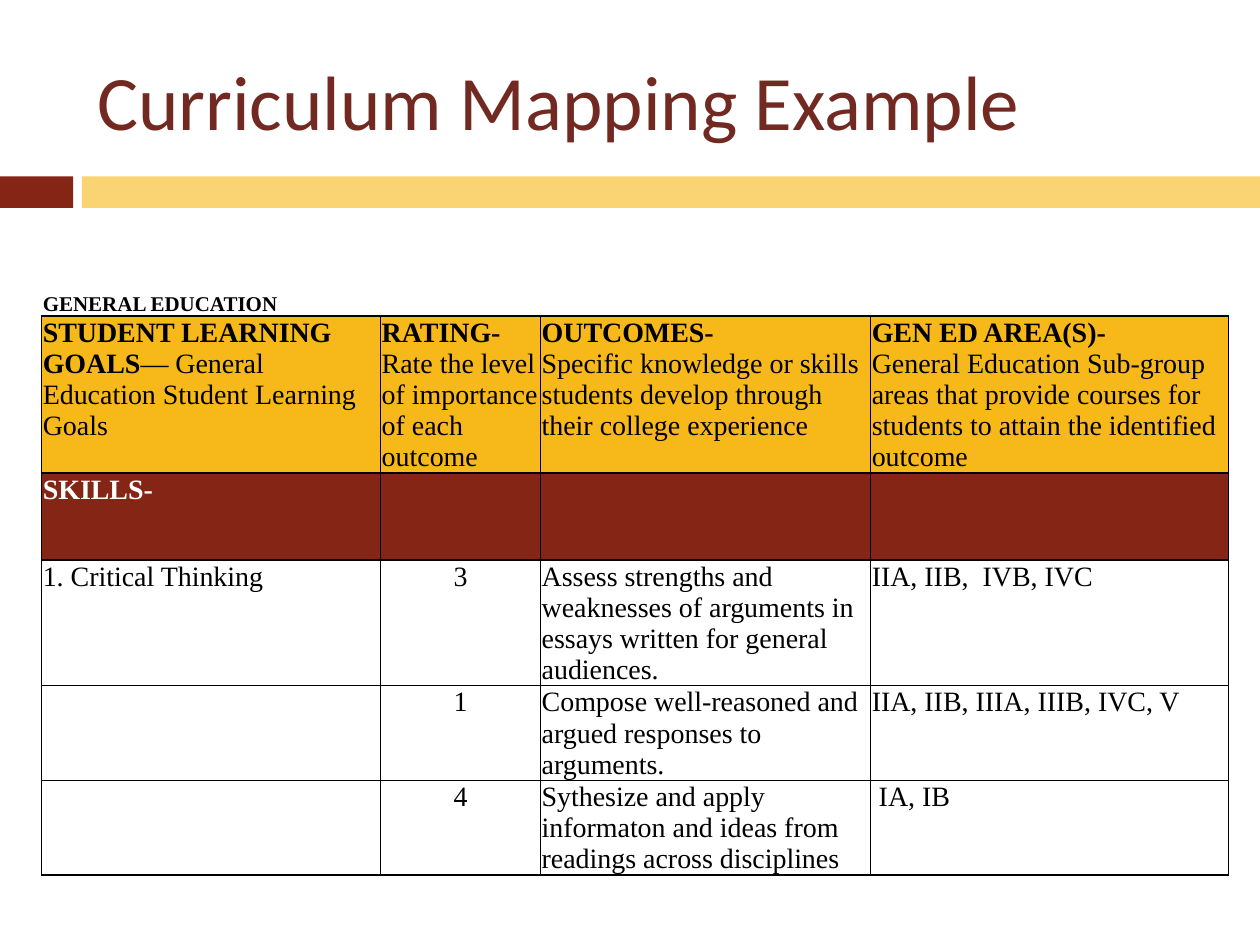
from lxml import etree
from pptx import Presentation
from pptx.dml.color import RGBColor
from pptx.enum.shapes import MSO_SHAPE
from pptx.enum.text import MSO_ANCHOR, PP_ALIGN
from pptx.oxml.ns import qn
from pptx.util import Inches, Pt

RECT = MSO_SHAPE.RECTANGLE
TOP, MIDDLE, BOTTOM = MSO_ANCHOR.TOP, MSO_ANCHOR.MIDDLE, MSO_ANCHOR.BOTTOM
LEFT, CENTER = PP_ALIGN.LEFT, PP_ALIGN.CENTER

MAROON, GOLD, PALE_GOLD = "852515", "F7B81A", "FAD372"
BLACK, WHITE, TITLE_RED = "000000", "FFFFFF", "712921"
COL_WIDTHS = [2.69, 1.27, 2.62, 2.84]
ROW_HEIGHTS = [0.76, 1.24, 0.69, 0.85, 0.69, 0.69]

# Each header cell: bold lead, separator, plain explanation
HEADERS = [
    ("STUDENT LEARNING GOALS", "", "— General Education Student Learning Goals"),
    ("RATING-", "\n", "Rate the level of importance of each outcome"),
    ("OUTCOMES-", "\n", "Specific knowledge or skills students develop "
     "through their college experience"),
    ("GEN ED AREA(S)-", "\n", "General Education Sub-group areas that provide "
     "courses for students to attain the identified outcome"),
]
OUTCOMES = [
    ("1. Critical Thinking", "3", "Assess strengths and weaknesses of arguments "
     "in essays written for general audiences.", "IIA, IIB,  IVB, IVC"),
    ("", "1", "Compose well-reasoned and argued responses to arguments.",
     "IIA, IIB, IIIA, IIIB, IVC, V"),
    ("", "4", "Sythesize and apply informaton and ideas from readings across "
     "disciplines", " IA, IB"),
]


def rgb(value):
    return RGBColor.from_string(value)


def add_text(p, text, size=16, color=BLACK, bold=False, font="Times New Roman"):
    r = p.add_run()
    r.text = text
    r.font.size, r.font.bold, r.font.name = Pt(size), bold, font
    r.font.color.rgb = rgb(color)


def add_bar(s, left, width, color):
    sp = s.shapes.add_shape(RECT, Inches(left), Inches(1.4), Inches(width), Inches(0.25))
    sp.shadow.inherit = False
    sp.fill.solid()
    sp.fill.fore_color.rgb = rgb(color)
    sp.line.fill.background()


def set_borders(cell, visible):
    tcPr = cell._tc.get_or_add_tcPr()
    for side in "LRTB":
        ln = etree.SubElement(tcPr, qn(f"a:ln{side}"), w=str(Pt(1)))
        if side in visible:
            fill = etree.SubElement(ln, qn("a:solidFill"))
            etree.SubElement(fill, qn("a:srgbClr"), val=BLACK)
        else:
            etree.SubElement(ln, qn("a:noFill"))


def format_cell(cell, fill=None, borders="LRTB", anchor=TOP, align=LEFT):
    """Set up a cell and return its paragraph."""
    cell.margin_left = cell.margin_right = cell.margin_top = Inches(0.01)
    cell.margin_bottom = 0
    cell.vertical_anchor = anchor
    set_borders(cell, borders)
    if fill:
        cell.fill.solid()
        cell.fill.fore_color.rgb = rgb(fill)
    else:
        cell.fill.background()
    p = cell.text_frame.paragraphs[0]
    p.alignment = align
    p.font.size = Pt(16)
    return p


def add_title(s):
    sp = s.shapes.title
    sp.left, sp.top, sp.width, sp.height = map(Inches, (0.67, 0.25, 8.92, 1.08))
    tf = sp.text_frame
    tf.word_wrap, tf.vertical_anchor = True, MIDDLE
    p = tf.paragraphs[0]
    p.alignment = LEFT
    add_text(p, "Curriculum Mapping Example", size=44, color=TITLE_RED, font="Calibri")


def add_curriculum_table(s):
    table = s.shapes.add_table(
        len(ROW_HEIGHTS), len(COL_WIDTHS), Inches(0.33), Inches(1.75),
        Inches(sum(COL_WIDTHS)), Inches(sum(ROW_HEIGHTS))).table
    table.first_row = table.horz_banding = False
    for col, width in zip(table.columns, COL_WIDTHS):
        col.width = Inches(width)
    for row, height in zip(table.rows, ROW_HEIGHTS):
        row.height = Inches(height)

    for c, (lead, separator, detail) in enumerate(HEADERS):
        # Caption row, open above and at the sides
        p = format_cell(table.cell(0, c), borders="B", anchor=BOTTOM)
        if c == 0:
            add_text(p, "GENERAL EDUCATION", size=12, bold=True)
        # Column headings
        p = format_cell(table.cell(1, c), fill=GOLD)
        add_text(p, lead, bold=True)
        if separator:
            p.add_line_break()
        add_text(p, detail)
        # Section band
        p = format_cell(table.cell(2, c), fill=MAROON)
        if c == 0:
            add_text(p, "SKILLS-", color=WHITE, bold=True)

    # Goals with their ratings, outcomes and areas
    for r, texts in enumerate(OUTCOMES, start=3):
        for c, text in enumerate(texts):
            p = format_cell(table.cell(r, c), align=CENTER if c == 1 else LEFT)
            if text:
                add_text(p, text)


def main():
    prs = Presentation()
    prs.slide_width, prs.slide_height = Inches(10), Inches(7.5)
    s = prs.slides.add_slide(prs.slide_layouts[5])
    add_bar(s, 0, 0.58, MAROON)
    add_bar(s, 0.65, 9.35, PALE_GOLD)
    add_title(s)
    add_curriculum_table(s)
    prs.save("out.pptx")


if __name__ == "__main__":
    main()
